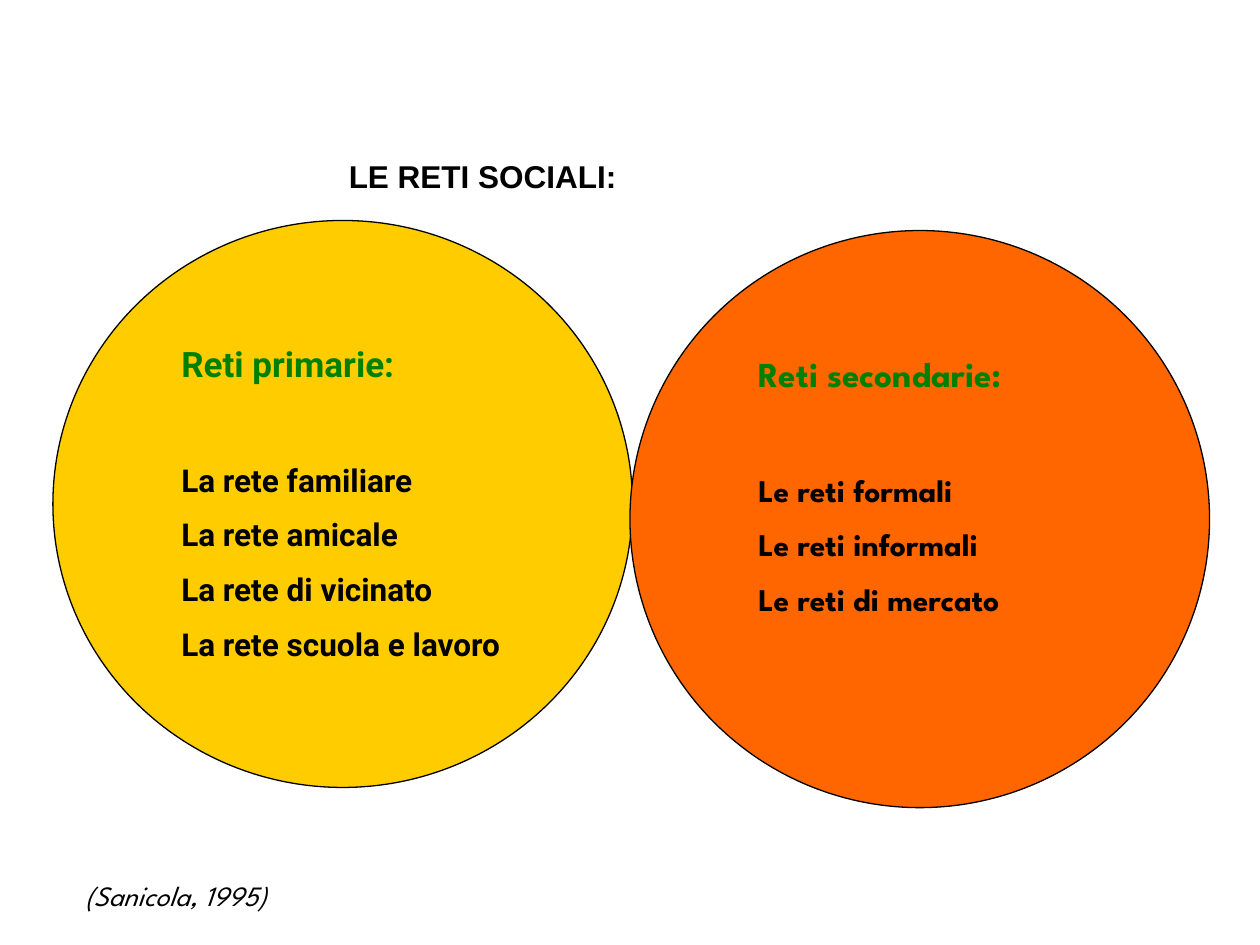
from pptx import Presentation
from pptx.dml.color import RGBColor
from pptx.enum.shapes import MSO_SHAPE
from pptx.util import Inches, Pt


def color(value):
    """Turn a hex string into a colour."""
    return RGBColor.from_string(value)


def add_text(frame, text, font="Arial", size=18, fill="000000", bold=False,
             italic=False, before=0, spacing=None):
    """Write one formatted paragraph in a text frame."""
    paragraph = frame.paragraphs[0]
    if paragraph.runs:
        paragraph = frame.add_paragraph()
    paragraph.space_before = Pt(before)
    if spacing:
        paragraph.line_spacing = spacing
    run = paragraph.add_run()
    run.text = text
    run.font.name = font
    run.font.size = Pt(size)
    run.font.bold = bold
    run.font.italic = italic
    run.font.color.rgb = color(fill)


def add_frame(slide, left, top, width, height):
    """Add a wrapping text box and return its frame."""
    box = slide.shapes.add_textbox(
        Inches(left), Inches(top), Inches(width), Inches(height))
    box.text_frame.word_wrap = True
    return box.text_frame


def add_circle(slide, left, top, width, height, fill):
    """Add an outlined circle for one kind of network."""
    circle = slide.shapes.add_shape(
        MSO_SHAPE.OVAL, Inches(left), Inches(top), Inches(width), Inches(height))
    circle.shadow.inherit = False
    circle.fill.solid()
    circle.fill.fore_color.rgb = color(fill)
    circle.line.color.rgb = color("000000")
    circle.line.width = Pt(0.75)


def add_networks(slide, left, top, height, heading, networks, font):
    """Write a heading and the networks listed below it."""
    frame = add_frame(slide, left + 0.92, top + 0.92, 2.75, height)
    add_text(frame, heading, font=font, size=20, fill="008000", bold=True)
    for index, network in enumerate(networks):
        add_text(frame, network, font=font, bold=True,
                 before=9.6 if index else 43.5)


def main():
    """Build the slide on social networks."""
    presentation = Presentation()
    presentation.slide_width = Inches(10)
    presentation.slide_height = Inches(7.5)
    slide = presentation.slides.add_slide(presentation.slide_layouts[6])

    title = add_frame(slide, 2.67, 1.08, 5.17, 1.42)
    add_text(title, "LE RETI SOCIALI:", bold=True, spacing=1.4)

    add_circle(slide, 0.42, 1.75, 4.6, 4.5, "FFCC00")
    add_circle(slide, 5, 1.83, 4.6, 4.58, "FF6600")
    add_networks(slide, 0.42, 1.75, 3.49, "Reti primarie:",
                 ["La rete familiare", "La rete amicale",
                  "La rete di vicinato", "La rete scuola e lavoro"], "Roboto")
    add_networks(slide, 5, 1.83, 2.69, "Reti secondarie:",
                 ["Le reti formali", "Le reti informali",
                  "Le reti di mercato"], "League Spartan")

    source = add_frame(slide, 0.58, 6.92, 2.92, 0.37)
    add_text(source, "(Sanicola, 1995)", font="League Spartan", size=16,
             italic=True)
    presentation.save("out.pptx")


if __name__ == "__main__":
    main()
